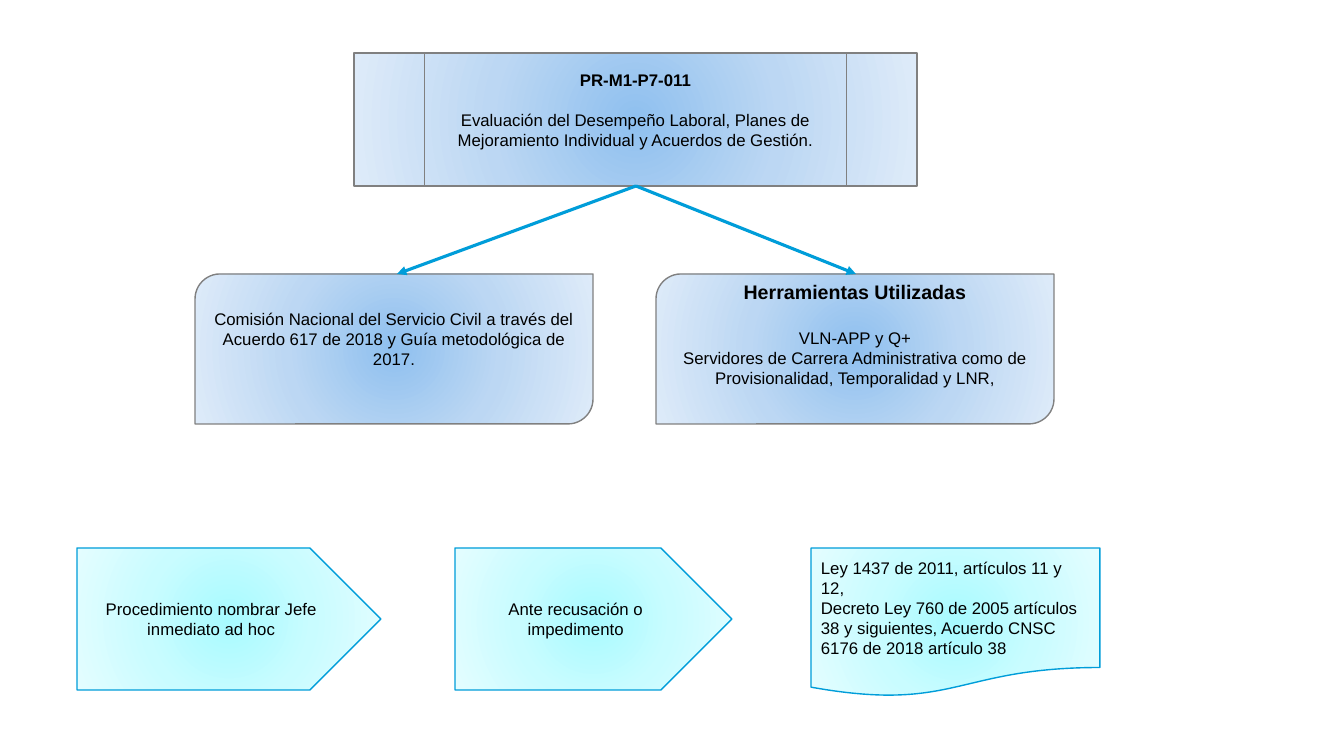
from pptx import Presentation
from pptx.dml.color import RGBColor
from pptx.enum.shapes import MSO_CONNECTOR, MSO_SHAPE as SHAPE
from pptx.enum.text import MSO_ANCHOR, PP_ALIGN as ALIGN
from pptx.oxml import parse_xml
from pptx.oxml.ns import nsdecls, qn
from pptx.util import Pt

PX = 9071.43  # EMU per px
BLACK = RGBColor(0x00, 0x00, 0x00)
GRAY = RGBColor(0x80, 0x80, 0x80)
BLUE = RGBColor(0x00, 0x9D, 0xD9)
SKY_STOPS = [RGBColor(0x8F, 0xC0, 0xEF), RGBColor(0xBC, 0xD7, 0xF3), RGBColor(0xDE, 0xEB, 0xF9)]
AQUA_STOPS = [RGBColor(0xA7, 0xFA, 0xFF), RGBColor(0xC9, 0xFC, 0xFF), RGBColor(0xE4, 0xFD, 0xFF)]


def emu(*lengths):
    return [round(length * PX) for length in lengths]


def add_box(preset, bounds, stops, outline, lines, align=ALIGN.CENTER, lift=0):
    """Each line is (text, size, bold, space before); lift is extra room below the text."""
    box = slide.shapes.add_shape(preset, *emu(*bounds))
    box.shadow.inherit = False
    box.line.color.rgb = outline
    box.line.width = Pt(1)

    # Radial gradient from the centre
    box.fill.background()
    marks = "".join(f'<a:gs pos="{i * 50000}"><a:srgbClr val="{color}"/></a:gs>'
                    for i, color in enumerate(stops))
    gradient = parse_xml(
        f'<a:gradFill {nsdecls("a")} rotWithShape="1"><a:gsLst>{marks}</a:gsLst>'
        '<a:path path="circle"><a:fillToRect l="50000" t="50000" r="50000" b="50000"/></a:path>'
        '</a:gradFill>')
    properties = box.element.spPr
    properties.replace(properties.find(qn("a:noFill")), gradient)

    frame = box.text_frame
    frame.word_wrap = True
    frame.vertical_anchor = MSO_ANCHOR.MIDDLE
    frame.margin_bottom = emu(5 + lift)[0]
    for i, (text, size, bold, before) in enumerate(lines):
        paragraph = frame.paragraphs[0] if i == 0 else frame.add_paragraph()
        paragraph.alignment = align
        paragraph.space_before = Pt(before)
        run = paragraph.add_run()
        run.text = text
        for name, value in {"name": "Arial", "size": Pt(size), "bold": bold}.items():
            setattr(run.font, name, value)
        run.font.color.rgb = BLACK


deck = Presentation()
deck.slide_width, deck.slide_height = emu(1344, 756)
slide = deck.slides.add_slide(deck.slide_layouts[6])

# Procedure
add_box(SHAPE.FLOWCHART_PREDEFINED_PROCESS, (354, 53, 563, 133), SKY_STOPS, GRAY, [
    ("PR-M1-P7-011", 12, True, 0),
    ("Evaluación del Desempeño Laboral, Planes de Mejoramiento Individual y Acuerdos de Gestión.",
     12, False, 14),
], lift=20)

# Legal basis and tools
branches = [
    (195, 20, [("Comisión Nacional del Servicio Civil a través del Acuerdo 617 de 2018 "
                "y Guía metodológica de 2017.", 12, False, 0)]),
    (656, 30, [("Herramientas Utilizadas", 14, True, 0),
               ("VLN-APP y Q+", 12, False, 17),
               ("Servidores de Carrera Administrativa como de Provisionalidad, Temporalidad y LNR,",
                12, False, 0)]),
]
for left, lift, lines in branches:
    add_box(SHAPE.ROUND_2_DIAG_RECTANGLE, (left, 274, 398, 150), SKY_STOPS, GRAY, lines, lift=lift)

# Steps for naming an ad hoc manager
steps = [
    (77, 304, "Procedimiento nombrar Jefe inmediato ad hoc"),
    (455, 277, "Ante recusación o impedimento"),
]
for left, width, text in steps:
    add_box(SHAPE.PENTAGON, (left, 548, width, 142), AQUA_STOPS, BLUE, [(text, 12, False, 0)])

# Applicable laws
add_box(SHAPE.FLOWCHART_DOCUMENT, (811, 548, 289, 149), AQUA_STOPS, BLUE, [
    ("Ley 1437 de 2011, artículos 11 y 12,", 12, False, 0),
    ("Decreto Ley 760 de 2005 artículos 38 y siguientes, Acuerdo CNSC 6176 de 2018 artículo 38",
     12, False, 0),
], align=ALIGN.LEFT)

# Arrows from the procedure to its branches
for branch_top in (397, 856):
    arrow = slide.shapes.add_connector(MSO_CONNECTOR.STRAIGHT, *emu(636, 186, branch_top, 274))
    arrow.line.color.rgb = BLUE
    arrow.line.width = Pt(2.25)
    properties = arrow.element.spPr
    properties.find(qn("a:ln")).append(parse_xml(f'<a:tailEnd {nsdecls("a")} type="triangle"/>'))
    properties.append(parse_xml(f'<a:effectLst {nsdecls("a")}/>'))

deck.save("out.pptx")
